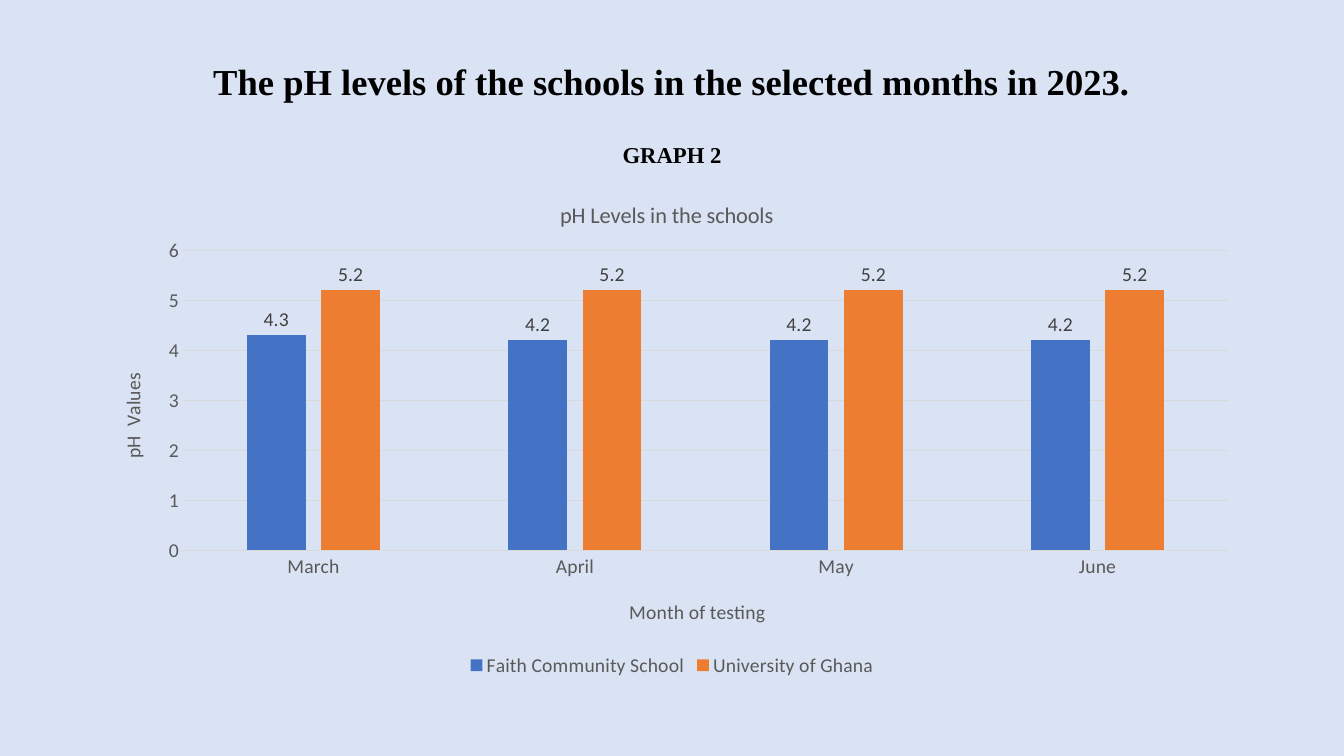
from lxml import etree
from pptx import Presentation
from pptx.chart.data import CategoryChartData
from pptx.dml.color import RGBColor
from pptx.enum.chart import XL_CHART_TYPE, XL_LABEL_POSITION, XL_LEGEND_POSITION, XL_TICK_MARK
from pptx.enum.text import MSO_ANCHOR, MSO_AUTO_SIZE, PP_ALIGN
from pptx.oxml.ns import qn
from pptx.util import Cm, Pt

COLUMN_CLUSTERED = XL_CHART_TYPE.COLUMN_CLUSTERED
OUTSIDE_END = XL_LABEL_POSITION.OUTSIDE_END
LEGEND_BOTTOM = XL_LEGEND_POSITION.BOTTOM
NO_TICKS = XL_TICK_MARK.NONE
MIDDLE = MSO_ANCHOR.MIDDLE
NO_AUTOFIT = MSO_AUTO_SIZE.NONE
CENTER = PP_ALIGN.CENTER

COLORS = {
    "background": "DAE3F3",
    "title": "000000",
    "chart text": "595959",
    "value label": "404040",
    "grid": "D9D9D9",
}
TITLE_FONT = "Times New Roman"
CHART_FONT = "Calibri"

MONTHS = ["March", "April", "May", "June"]
SCHOOLS = [
    ("Faith Community School", [4.3, 4.2, 4.2, 4.2], "4472C4"),
    ("University of Ghana", [5.2, 5.2, 5.2, 5.2], "ED7D31"),
]


def color(name):
    return RGBColor.from_string(COLORS[name])


def style_font(font, name, size, color_name, bold=False):
    font.name = name
    font.size = Pt(size)
    font.bold = bold
    font.color.rgb = color(color_name)


def set_layout(element, index, **settings):
    """Place a chart part by fractions of the chart area."""
    for layout in element.findall(qn("c:layout")):
        element.remove(layout)
    layout = etree.Element(qn("c:layout"))
    manual = etree.SubElement(layout, qn("c:manualLayout"))
    for tag, value in settings.items():
        etree.SubElement(manual, qn(f"c:{tag}")).set("val", str(value))
    element.insert(index, layout)


def add_chart_title(owner, text, size, x, y):
    """Give a chart or an axis a title at the given fractions."""
    title = owner.chart_title if hasattr(owner, "chart_title") else owner.axis_title
    title.text_frame.text = text
    run = title.text_frame.paragraphs[0].runs[0]
    style_font(run.font, CHART_FONT, size, "chart text")
    set_layout(title._element, 1, xMode="edge", yMode="edge", x=x, y=y)


def fill_title(shape, left, top, width, height):
    shape.left, shape.top, shape.width, shape.height = left, top, width, height
    text_frame = shape.text_frame
    text_frame.text = "The pH levels of the schools in the selected months in 2023.\nGRAPH 2"
    text_frame.auto_size = NO_AUTOFIT
    text_frame.vertical_anchor = MIDDLE
    for paragraph, size, gap in zip(text_frame.paragraphs, (26.1, 16.2), (0, 29)):
        paragraph.alignment = CENTER
        paragraph.line_spacing = 0.9
        paragraph.space_before = Pt(gap)
        style_font(paragraph.runs[0].font, TITLE_FONT, size, "title", bold=True)


def format_axes(chart):
    for axis in (chart.category_axis, chart.value_axis):
        axis.major_tick_mark = axis.minor_tick_mark = NO_TICKS
        style_font(axis.tick_labels.font, CHART_FONT, 14, "chart text")
    value_axis = chart.value_axis
    value_axis.minimum_scale, value_axis.maximum_scale = 0, 6
    value_axis.major_unit = 1
    value_axis.format.line.fill.background()
    for line in (chart.category_axis.format.line, value_axis.major_gridlines.format.line):
        line.color.rgb = color("grid")
        line.width = Pt(0.75)


def add_ph_chart(slide, left, top, width, height):
    data = CategoryChartData(number_format="General")
    data.categories = MONTHS
    for name, values, _ in SCHOOLS:
        data.add_series(name, values)
    chart = slide.shapes.add_chart(COLUMN_CLUSTERED, left, top, width, height, data).chart
    style_font(chart.font, CHART_FONT, 14, "chart text")
    format_axes(chart)

    # Titles and plot area
    add_chart_title(chart, "pH Levels in the schools", 16, 0.4, 0.05)
    add_chart_title(chart.category_axis, "Month of testing", 14, 0.46, 0.83)
    add_chart_title(chart.value_axis, "pH  Values", 14, 0.02, 0.39)
    plot_area = chart._chartSpace.chart.plotArea
    set_layout(plot_area, 0, layoutTarget="inner", xMode="edge", yMode="edge",
               x=0.078, y=0.157, w=0.902, h=0.587)

    # Columns and value labels
    plot = chart.plots[0]
    plot.vary_by_categories = False
    plot.gap_width, plot.overlap = 219, -27
    for series, (_, _, fill) in zip(plot.series, SCHOOLS):
        series.format.fill.solid()
        series.format.fill.fore_color.rgb = RGBColor.from_string(fill)
        labels = series.data_labels
        labels.show_value = True
        labels.position = OUTSIDE_END
        style_font(labels.font, CHART_FONT, 14, "value label")

    # Legend
    chart.has_legend = True
    chart.legend.position = LEGEND_BOTTOM
    chart.legend.include_in_layout = False
    style_font(chart.legend.font, CHART_FONT, 14, "chart text")


def main():
    presentation = Presentation()
    presentation.slide_width, presentation.slide_height = Cm(33.87), Cm(19.05)
    slide = presentation.slides.add_slide(presentation.slide_layouts[5])
    slide.background.fill.solid()
    slide.background.fill.fore_color.rgb = color("background")

    left, width = Cm(2.33), Cm(29.21)
    fill_title(slide.shapes.title, left, Cm(1.55), width, Cm(2.74))
    add_ph_chart(slide, left, Cm(4.29), width, Cm(12.88))
    presentation.save("out.pptx")


if __name__ == "__main__":
    main()
